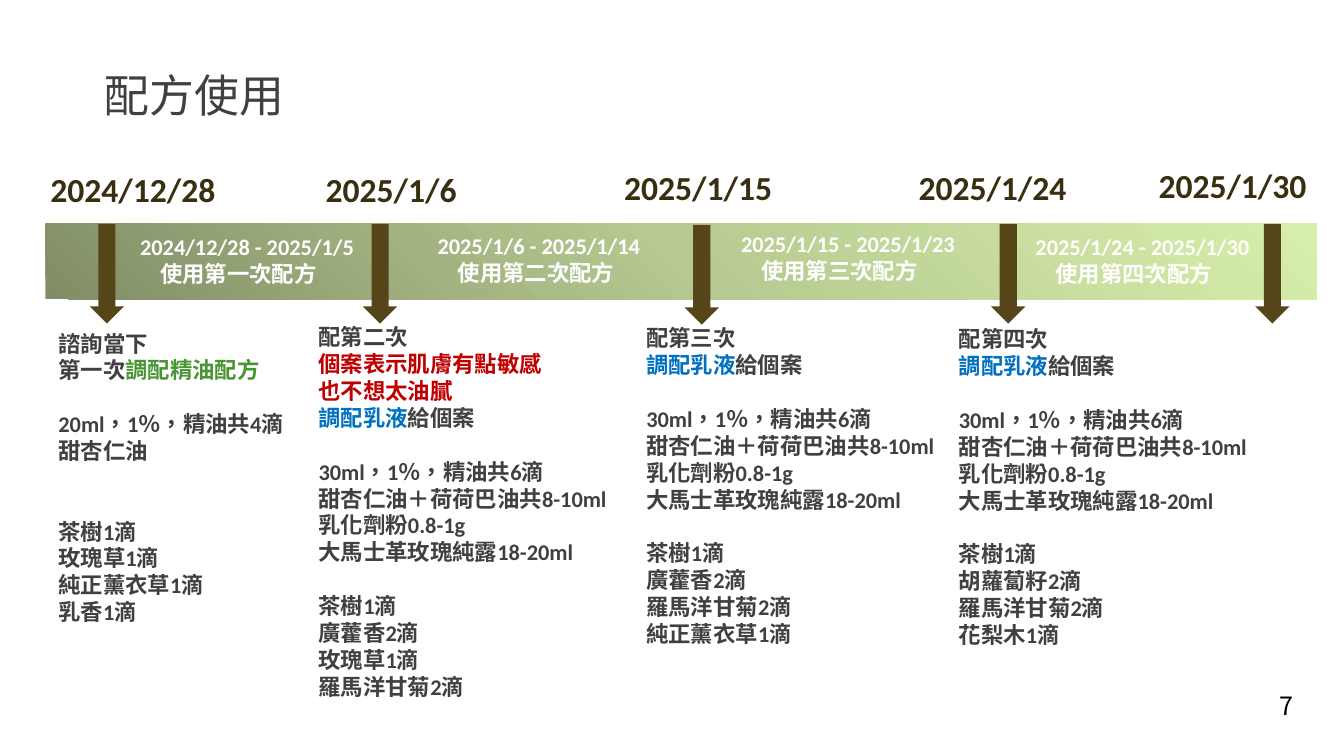
from copy import deepcopy

from lxml import etree
from pptx import Presentation
from pptx.dml.color import RGBColor
from pptx.enum import shapes, text
from pptx.oxml import ns
from pptx import util as u

PX = 9144
WHITE = RGBColor(0xFF, 0xFF, 0xFF)
BLACK = RGBColor(0x00, 0x00, 0x00)
GRAY = RGBColor(0x40, 0x40, 0x40)
DARK_BROWN = RGBColor(0x38, 0x2E, 0x10)
BROWN = RGBColor(0x55, 0x45, 0x19)
GREEN = RGBColor(0x48, 0x96, 0x33)
RED = RGBColor(0xC0, 0x00, 0x00)
BLUE = RGBColor(0x00, 0x70, 0xC0)
BAND = [
    (0, RGBColor(0x80, 0x8D, 0x66)),
    (0.5, RGBColor(0xB6, 0xC9, 0x90)),
    (1, RGBColor(0xD8, 0xEF, 0xAB)),
]


class TimelineSlide:
    font = "Calibri"
    blank_line = 19.2

    def __init__(self, prs):
        self.s = prs.slides.add_slide(prs.slide_layouts[6])

    def run(self, p, words, size, color, bold=True, font=None):
        r = p.add_run()
        r.text = words
        r.font.size = u.Pt(size)
        r.font.bold = bold
        r.font.color.rgb = color
        r.font.name = font or self.font
        props = r._r.get_or_add_rPr()
        props.set("lang", "zh-TW")
        ea = etree.SubElement(props, ns.qn("a:ea"))
        ea.set("typeface", font or self.font)

    def frame(self, sp):
        tf = sp.text_frame
        tf.margin_left = tf.margin_right = tf.margin_top = tf.margin_bottom = 0
        tf.word_wrap = False
        return tf

    def box(self, x, y, w, h):
        return self.frame(self.s.shapes.add_textbox(x * PX, y * PX, w * PX, h * PX))

    def shape(self, kind, x, y, w, h):
        sp = self.s.shapes.add_shape(kind, x * PX, y * PX, w * PX, h * PX)
        sp.shadow.inherit = False
        sp.line.fill.background()
        return sp

    def title(self, words, x, y, w, h):
        p = self.box(x, y, w, h).paragraphs[0]
        self.run(p, words, 32, GRAY, False, "Noto Sans CJK SC")

    def band(self, x, y, w, h):
        fill = self.shape(shapes.MSO_SHAPE.RECTANGLE, x, y, w, h).fill
        fill.gradient()
        fill.gradient_angle = 45
        first = fill.gradient_stops[0]._gs
        first.addnext(deepcopy(first))
        for stop, (position, color) in zip(fill.gradient_stops, BAND):
            stop.position = position
            stop.color.rgb = color

    def date(self, words, x, y):
        self.run(self.box(x, y, 172, 28).paragraphs[0], words, 24, DARK_BROWN)

    def arrow(self, x, y):
        sp = self.shape(shapes.MSO_SHAPE.DOWN_ARROW, x, y, 34, 99)
        sp.fill.solid()
        sp.fill.fore_color.rgb = BROWN

    def period(self, dates, usage, x, y):
        tf = self.box(x, y, 230, 49)
        self.run(tf.paragraphs[0], dates, 16, WHITE)
        p = tf.add_paragraph()
        p._p.get_or_add_pPr().set("marL", str(20 * PX))
        self.run(p, usage, 16, WHITE)

    def column(self, x, y, w, h, groups):
        tf = self.box(x, y, w, h)
        p = tf.paragraphs[0]
        for g, (gap, lines) in enumerate(groups):
            for i, line in enumerate(lines):
                if g or i:
                    p = tf.add_paragraph()
                if gap and i == 0:
                    p.space_before = u.Pt(gap * self.blank_line)
                for words, color in [(line, GRAY)] if isinstance(line, str) else line:
                    self.run(p, words, 16, color)

    def page_number(self, words, x, y, size):
        sp = self.shape(shapes.MSO_SHAPE.OVAL, x, y, size, size)
        sp.fill.background()
        tf = self.frame(sp)
        tf.vertical_anchor = text.MSO_ANCHOR.MIDDLE
        p = tf.paragraphs[0]
        p.alignment = text.PP_ALIGN.CENTER
        self.run(p, words, 18, BLACK, False, "Noto Sans CJK TC")


LOTION = [("調配乳液", BLUE), ("給個案", GRAY)]
LOTION_BASE = [
    "30ml，1％，精油共6滴",
    "甜杏仁油＋荷荷巴油共8-10ml",
    "乳化劑粉0.8-1g",
    "大馬士革玫瑰純露18-20ml",
]
DATES = [
    ("2024/12/28", 50, 168),
    ("2025/1/6", 323, 168),
    ("2025/1/15", 619, 166),
    ("2025/1/24", 911, 166),
    ("2025/1/30", 1149, 164),
]
PERIODS = [
    ("2024/12/28 - 2025/1/5", "使用第一次配方", 139, 231),
    ("2025/1/6 - 2025/1/14", "使用第二次配方", 434, 230),
    ("2025/1/15 - 2025/1/23", "使用第三次配方", 735, 228),
    ("2025/1/24 - 2025/1/30", "使用第四次配方", 1027, 231),
]
ARROWS = [(89, 222), (360, 222), (679, 223), (983, 222), (1245, 222)]
COLUMNS = [
    (58, 327, 257, 62, [
        (0, ["諮詢當下", [("第一次", GRAY), ("調配精油配方", GREEN)]]),
        (1, ["20ml，1％，精油共4滴", "甜杏仁油"]),
        (2, ["茶樹1滴", "玫瑰草1滴", "純正薰衣草1滴", "乳香1滴"]),
    ]),
    (316, 321, 326, 377, [
        (0, ["配第二次", [("個案表示肌膚有點敏感", RED)], [("也不想太油膩", RED)], LOTION]),
        (1, LOTION_BASE),
        (1, ["茶樹1滴", "廣藿香2滴", "玫瑰草1滴", "羅馬洋甘菊2滴"]),
    ]),
    (641, 322, 331, 330, [
        (0, ["配第三次", LOTION]),
        (1, LOTION_BASE),
        (1, ["茶樹1滴", "廣藿香2滴", "羅馬洋甘菊2滴", "純正薰衣草1滴"]),
    ]),
    (951, 323, 331, 330, [
        (0, ["配第四次", LOTION]),
        (1, LOTION_BASE),
        (1, ["茶樹1滴", "胡蘿蔔籽2滴", "羅馬洋甘菊2滴", "花梨木1滴"]),
    ]),
]


def main():
    prs = Presentation()
    prs.slide_width = 1333 * PX
    prs.slide_height = 750 * PX
    slide = TimelineSlide(prs)
    slide.title("配方使用", 104, 67, 233, 71)
    slide.band(45, 222, 1261, 75)
    for date in DATES:
        slide.date(*date)
    for column in COLUMNS:
        slide.column(*column)
    for period in PERIODS:
        slide.period(*period)
    slide.page_number("7", 1252, 676, 47)
    for arrow in ARROWS:
        slide.arrow(*arrow)
    prs.save("out.pptx")


if __name__ == "__main__":
    main()
